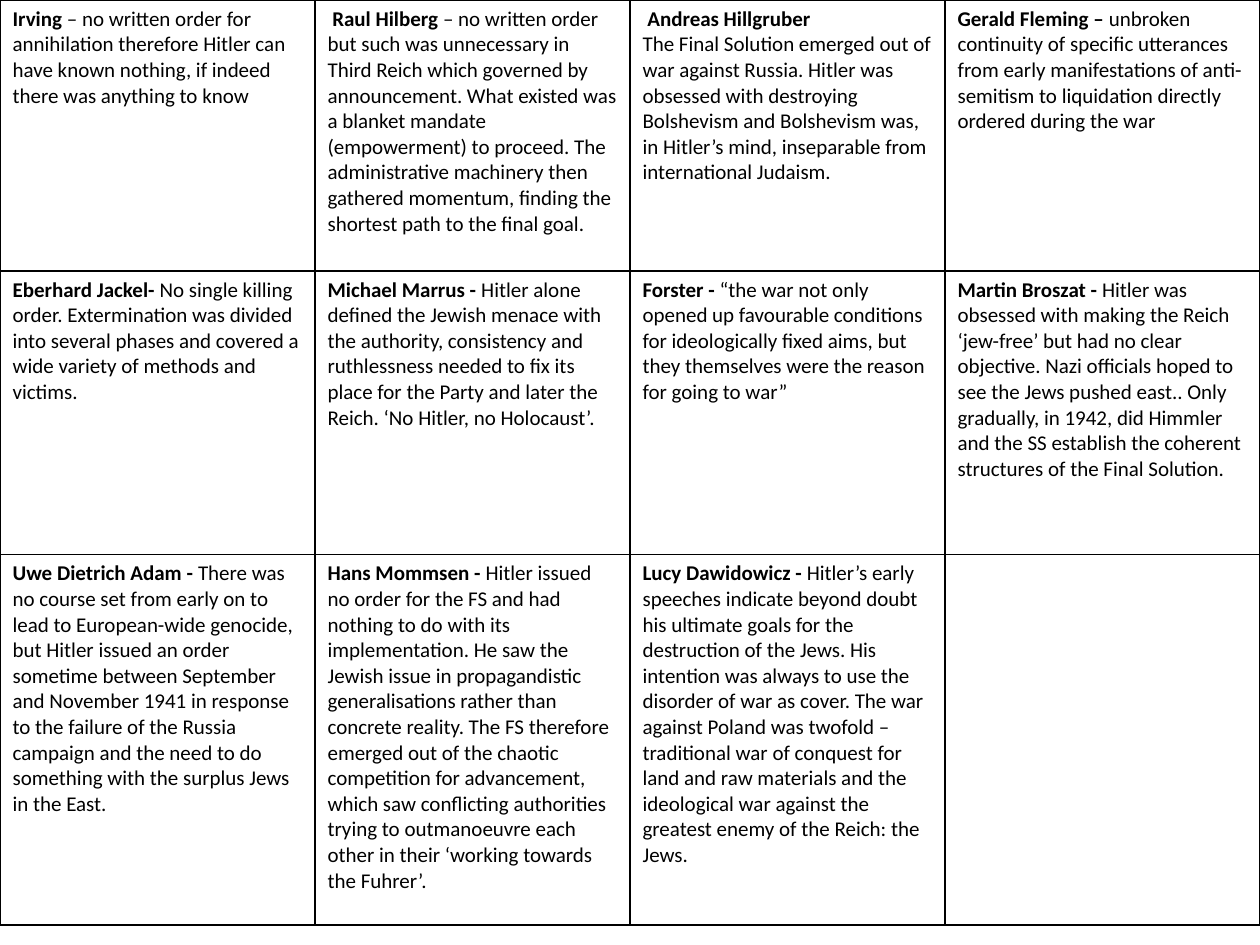
import pptx
import pptx.util
import pptx.dml.color
import pptx.oxml
import pptx.oxml.ns
from pptx.util import Cm

COLORS = {"ink": "000000"}
WIDTH = 25.4
HEIGHT = 19.05
ROWS = [5.46, 5.72, 7.47]

VIEWS = [
    [
        [("Irving", " – no written order for annihilation therefore Hitler can have known nothing, if indeed there was anything to know")],
        [(" Raul Hilberg ", "– no written order but such was unnecessary in Third Reich which governed by announcement. What existed was a blanket mandate (empowerment) to proceed. The administrative machinery then gathered momentum, finding the shortest path to the final goal.")],
        [(" Andreas Hillgruber", ""),
         ("", "The Final Solution emerged out of war against Russia. Hitler was obsessed with destroying Bolshevism and Bolshevism was, in Hitler’s mind, inseparable from international Judaism.")],
        [("Gerald Fleming – ", "unbroken continuity of specific utterances from early manifestations of anti-semitism to liquidation directly ordered during the war")],
    ],
    [
        [("Eberhard Jackel- ", "No single killing order. Extermination was divided into several phases and covered a wide variety of methods and victims.")],
        [("Michael Marrus - ", "Hitler alone defined the Jewish menace with the authority, consistency and ruthlessness needed to fix its place for the Party and later the Reich. ‘No Hitler, no Holocaust’.")],
        [("Forster - ", "“the war not only opened up favourable conditions for ideologically fixed aims, but they themselves were the reason for going to war”")],
        [("Martin Broszat - ", "Hitler was obsessed with making the Reich ‘jew-free’ but had no clear objective. Nazi officials hoped to see the Jews pushed east.. Only gradually, in 1942, did Himmler and the SS establish the coherent structures of the Final Solution.")],
    ],
    [
        [("Uwe Dietrich Adam - ", "There was no course set from early on to lead to European-wide genocide, but Hitler issued an order sometime between September and November 1941 in response to the failure of the Russia campaign and the need to do something with the surplus Jews in the East.")],
        [("Hans Mommsen - ", "Hitler issued no order for the FS and had nothing to do with its implementation. He saw the Jewish issue in propagandistic generalisations rather than concrete reality. The FS therefore emerged out of the chaotic competition for advancement, which saw conflicting authorities trying to outmanoeuvre each other in their ‘working towards the Fuhrer’.")],
        [("Lucy Dawidowicz - ", "Hitler’s early speeches indicate beyond doubt his ultimate goals for the destruction of the Jews. His intention was always to use the disorder of war as cover. The war against Poland was twofold – traditional war of conquest for land and raw materials and the ideological war against the greatest enemy of the Reich: the Jews.")],
        [],
    ],
]


class Painter:
    def __init__(self, slide, face="Calibri", size=12, line=1):
        self.slide = slide
        self.face = face
        self.size = size
        self.line = line

    def table(self, views, rows, width):
        count = len(views[0])
        frame = self.slide.shapes.add_table(
            len(rows), count, Cm(0), Cm(0), Cm(width), Cm(sum(rows)))
        grid = frame.table
        grid.first_row = False
        grid.horz_banding = False
        for col in grid.columns:
            col.width = Cm(width / count)
        for row, height, line in zip(grid.rows, rows, views):
            row.height = Cm(height)
            for cell, paras in zip(row.cells, line):
                self.border(cell)
                cell.fill.background()
                self.text(cell.text_frame, paras)

    def border(self, cell):
        props = cell._tc.get_or_add_tcPr()
        for side in "LRTB":
            props.append(pptx.oxml.parse_xml(
                f'<a:ln{side} {pptx.oxml.ns.nsdecls("a")} w="{pptx.util.Pt(self.line)}">'
                f'<a:solidFill><a:srgbClr val="{COLORS["ink"]}"/></a:solidFill>'
                f'</a:ln{side}>'))

    def text(self, body, paras):
        for index, (name, claim) in enumerate(paras):
            para = body.add_paragraph() if index else body.paragraphs[0]
            para.font.name = self.face
            para.font.size = pptx.util.Pt(self.size)
            para.font.color.rgb = pptx.dml.color.RGBColor.from_string(COLORS["ink"])
            for words, bold in ((name, True), (claim, False)):
                if words:
                    run = para.add_run()
                    run.text = words
                    run.font.bold = bold


def main():
    deck = pptx.Presentation()
    deck.slide_width = Cm(WIDTH)
    deck.slide_height = Cm(HEIGHT)
    slide = deck.slides.add_slide(deck.slide_layouts[6])
    Painter(slide).table(VIEWS, ROWS, WIDTH)
    deck.save("out.pptx")


if __name__ == "__main__":
    main()
